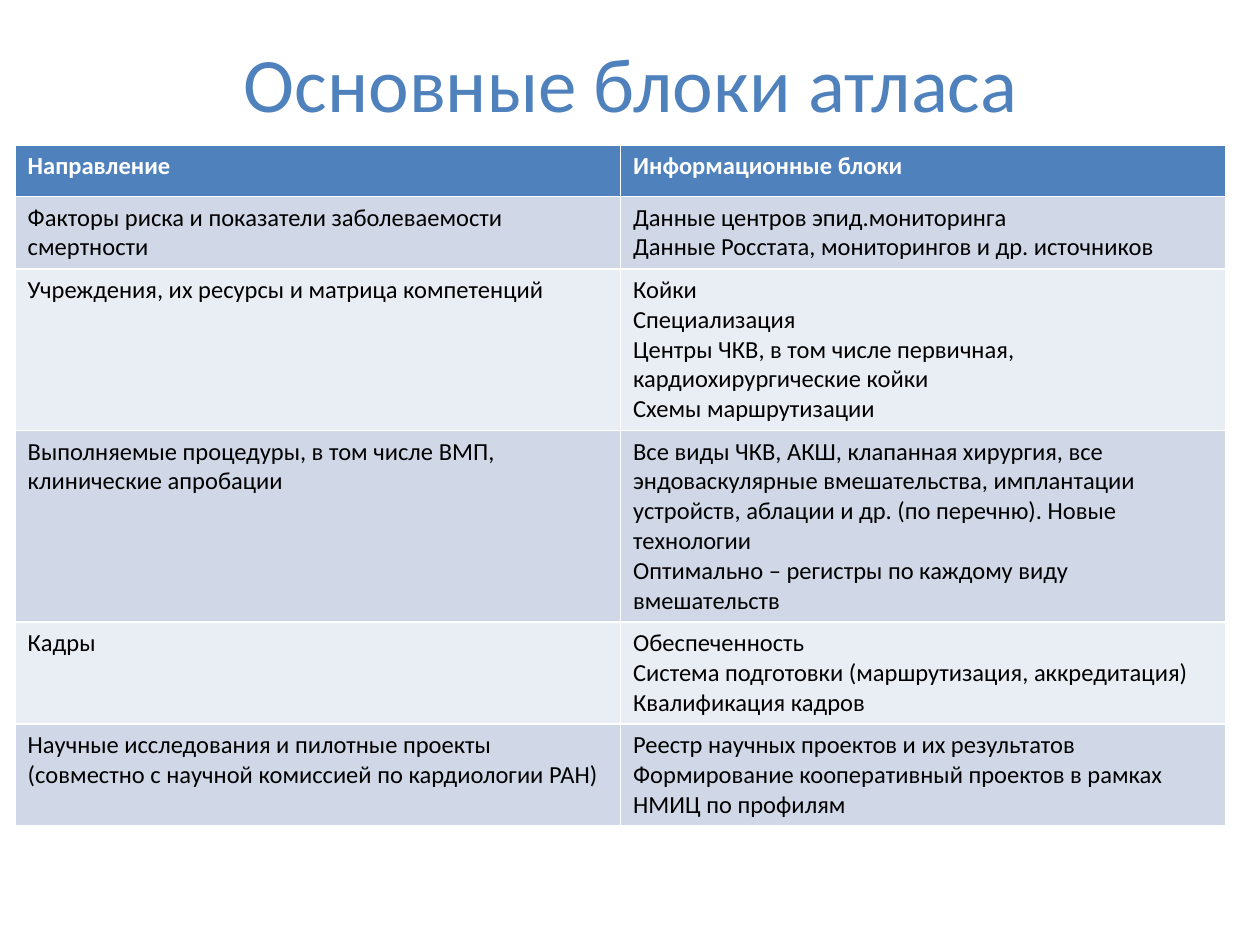
from dataclasses import dataclass

from pptx import Presentation
from pptx.dml.color import RGBColor
from pptx.enum.text import MSO_ANCHOR, PP_ALIGN
from pptx.util import Inches, Pt

CENTER = PP_ALIGN.CENTER
MIDDLE = MSO_ANCHOR.MIDDLE
TITLE_ONLY_LAYOUT = 5

TITLE = "Основные блоки атласа"
HEADER = ("Направление", "Информационные блоки")
BLOCKS = [
    ("Факторы риска и показатели заболеваемости смертности",
     "Данные центров эпид.мониторинга\n"
     "Данные Росстата, мониторингов и др. источников"),
    ("Учреждения, их ресурсы и матрица компетенций",
     "Койки\n"
     "Специализация\n"
     "Центры ЧКВ, в том числе первичная, кардиохирургические койки\n"
     "Схемы маршрутизации"),
    ("Выполняемые процедуры, в том числе ВМП, клинические апробации",
     "Все виды ЧКВ, АКШ, клапанная хирургия, все эндоваскулярные вмешательства, "
     "имплантации устройств, аблации и др. (по перечню). Новые технологии\n"
     "Оптимально – регистры по каждому виду вмешательств"),
    ("Кадры",
     "Обеспеченность\n"
     "Система подготовки (маршрутизация, аккредитация)\n"
     "Квалификация кадров"),
    ("Научные исследования и пилотные проекты "
     "(совместно с научной комиссией по кардиологии РАН)",
     "Реестр научных проектов и их результатов\n"
     "Формирование кооперативный проектов в рамках НМИЦ по профилям"),
]


@dataclass(frozen=True)
class Theme:
    font: str = "Calibri"
    title_size: int = 44
    table_size: int = 14
    accent: str = "4F81BD"
    header_text: str = "FFFFFF"
    body_text: str = "000000"
    bands: tuple = ("D0D8E8", "E9EDF4")


class SlideBuilder:
    """Holds the theme and the current slide and adds styled elements to it."""

    def __init__(self, slide, theme):
        self.slide = slide
        self.theme = theme

    def format_text(self, text_frame, size, color, bold=False):
        for paragraph in text_frame.paragraphs:
            for run in paragraph.runs:
                run.font.name = self.theme.font
                run.font.size = Pt(size)
                run.font.bold = bold
                run.font.color.rgb = RGBColor.from_string(color)

    def title(self, text, left, top, width, height):
        shape = self.slide.shapes.title
        shape.left, shape.top = Inches(left), Inches(top)
        shape.width, shape.height = Inches(width), Inches(height)
        text_frame = shape.text_frame
        text_frame.text = text
        text_frame.vertical_anchor = MIDDLE
        text_frame.paragraphs[0].alignment = CENTER
        self.format_text(text_frame, self.theme.title_size, self.theme.accent)

    def cell(self, cell, text, fill, color, bold):
        cell.fill.solid()
        cell.fill.fore_color.rgb = RGBColor.from_string(fill)
        cell.text_frame.text = text
        self.format_text(cell.text_frame, self.theme.table_size, color, bold)

    def table(self, rows, left, top, width, height, row_height):
        theme = self.theme
        shape = self.slide.shapes.add_table(
            len(rows), len(rows[0]),
            Inches(left), Inches(top), Inches(width), Inches(height))
        for row_index, texts in enumerate(rows):
            is_header = row_index == 0
            fill = theme.accent if is_header else theme.bands[(row_index - 1) % 2]
            color = theme.header_text if is_header else theme.body_text
            shape.table.rows[row_index].height = Inches(row_height)
            for column_index, text in enumerate(texts):
                self.cell(shape.table.cell(row_index, column_index),
                          text, fill, color, is_header)
        shape.height = Inches(height)


def main():
    presentation = Presentation()
    presentation.slide_width = Inches(10)
    presentation.slide_height = Inches(7.5)
    layout = presentation.slide_layouts[TITLE_ONLY_LAYOUT]
    builder = SlideBuilder(presentation.slides.add_slide(layout), Theme())
    builder.title(TITLE, 0.51, 0.21, 9, 0.87)
    builder.table([HEADER, *BLOCKS], 0.12, 1.15, 9.61, 5.34, row_height=0.41)
    presentation.save("out.pptx")


if __name__ == "__main__":
    main()
